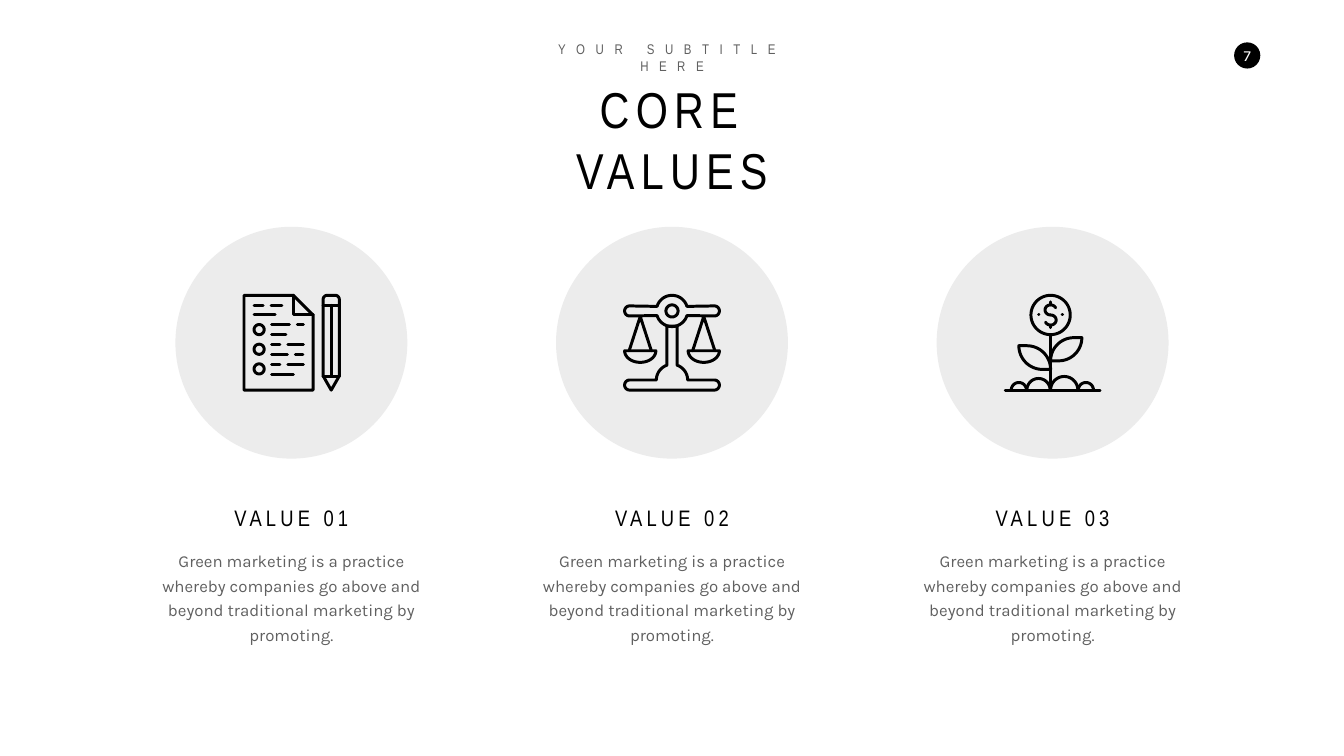
from math import cos, radians, sin

from pptx import Presentation
from pptx.dml.color import RGBColor
from pptx.enum.shapes import MSO_SHAPE
from pptx.enum.text import MSO_ANCHOR, MSO_AUTO_SIZE, PP_ALIGN
from pptx.util import Pt

EMU_PER_PX = 9144  # 100 px to the inch
CENTER, PITCH = 1333, 755
ICON_SIZE, ICON_TOP = 194, 583
HEADING_FONT, BODY_FONT = "Arial Narrow", "Karla"
BLACK, GRAY, PALE, WHITE = "000000", "606060", "ECECEC", "FFFFFF"
DESCRIPTION = ("Green marketing is a practice whereby companies go above and "
               "beyond traditional marketing by promoting.")


def px(length):
    return round(length * EMU_PER_PX)


def color(hex_string):
    return RGBColor.from_string(hex_string)


def place(shape, left, top, width, height):
    shape.left, shape.top = px(left), px(top)
    shape.width, shape.height = px(width), px(height)


def write(shape, text, size, font_name, font_color, spacing=0, wrap=True,
          anchor=MSO_ANCHOR.TOP, line_spacing=None):
    """Fill a shape with one centred run; spacing is letter spacing in points."""
    frame = shape.text_frame
    frame.word_wrap = wrap
    frame.auto_size = MSO_AUTO_SIZE.NONE
    frame.vertical_anchor = anchor
    paragraph = frame.paragraphs[0]
    paragraph.alignment = PP_ALIGN.CENTER
    if line_spacing:
        paragraph.line_spacing = Pt(line_spacing)
    run = paragraph.add_run()
    run.text = text
    run.font.size = Pt(size)
    run.font.name = font_name
    run.font.color.rgb = color(font_color)
    if spacing:
        run._r.get_or_add_rPr().set("spc", str(spacing * 100))


def add_text(slide, box, text, *style, **options):
    shape = slide.shapes.add_textbox(*map(px, box))
    write(shape, text, *style, **options)


def add_disc(slide, left, top, diameter, fill):
    shape = slide.shapes.add_shape(
        MSO_SHAPE.OVAL, px(left), px(top), px(diameter), px(diameter))
    shape.shadow.inherit = False
    shape.fill.solid()
    shape.fill.fore_color.rgb = color(fill)
    shape.line.fill.background()
    return shape


def arc(x, y, radius, start, end, radius_y=None):
    """Points along an arc; degrees run clockwise from the right."""
    steps = max(4, round(abs(end - start) / 6))
    angles = [radians(start + (end - start) * i / steps) for i in range(steps + 1)]
    return [(x + radius * cos(a), y + (radius_y or radius) * sin(a)) for a in angles]


def circle(x, y, radius):
    return arc(x, y, radius, 0, 360)


def closed(points):
    return points + points[:1]


def dash(y, start, end):
    return [(start, y), (end, y)]


def checklist_strokes():
    page = closed([(3, 3), (101, 3), (140, 42), (140, 191), (3, 191)])
    fold = [(101, 3), (101, 42), (140, 42)]
    pencil = closed(arc(168, 11, 8, 180, 270) + arc(184, 11, 8, 270, 360)
                    + [(192, 163), (176, 191), (160, 163)])
    dashes = [(23, 23, 41), (23, 57, 78), (42, 23, 65), (61, 58, 93),
              (61, 109, 121), (81, 58, 86), (101, 58, 74), (101, 90, 121),
              (120, 58, 89), (120, 105, 120), (140, 58, 74), (140, 90, 121),
              (160, 58, 101), (23, 160, 192), (164, 160, 192)]
    return [page, fold, pencil, [(176, 23), (176, 164)],
            *[dash(*values) for values in dashes],
            *[circle(33, y, 10) for y in (71, 110, 149)]]


def scales_strokes():
    beam = closed(arc(97, 34, 31, 197, 343) + arc(181, 34, 10, -90, 90)
                  + arc(97, 34, 31, 17, 163) + arc(13, 34, 10, 90, 270))
    stand = closed(arc(97, 171, 31, 180, 251) + [(87, 64), (107, 64)]
                   + arc(97, 171, 31, 289, 360) + arc(181, 181, 10, -90, 90)
                   + arc(13, 181, 10, 90, 270))
    strokes = [beam, stand, circle(97, 34, 12)]
    for x in (34, 160):
        strokes += [[(x - 22, 113), (x, 45), (x + 22, 113)],
                    closed(arc(x, 113, 31, 0, 180, radius_y=23))]
    return strokes


def plant_strokes():
    dollar = [arc(93, 32, 11, 335, 90, radius_y=10),
              arc(93, 52, 11, 270, 515, radius_y=10),
              [(93, 16), (93, 22)], [(93, 62), (93, 67)]]
    right_leaf = closed(arc(139, 133, 46, 180, 270) + arc(109, 87, 46, 0, 90))
    left_leaf = closed(arc(46, 150, 47, 270, 360) + arc(77, 103, 47, 90, 180))
    mounds = [arc(x, 191, radius, 180, 360)
              for x, radius in ((30, 15), (69, 23), (120, 27), (163, 15))]
    return [circle(93, 42, 39), *dollar, dash(42, 69, 70), dash(42, 116, 117),
            [(93, 81), (93, 191)], right_leaf, left_leaf, *mounds, dash(191, 3, 191)]


def add_icon(slide, left, top, strokes):
    """Draw all strokes of an icon as one unfilled outline."""
    paths = [[(px(left + x), px(top + y)) for x, y in stroke] for stroke in strokes]
    builder = slide.shapes.build_freeform(*paths[0][0])
    for index, points in enumerate(paths):
        if index:
            builder.move_to(*points[0])
        builder.add_line_segments(points[1:], close=points[0] == points[-1])
    shape = builder.convert_to_shape()
    shape.shadow.inherit = False
    shape.fill.background()
    shape.line.color.rgb = color(BLACK)
    shape.line.width = Pt(4.25)
    outline = shape.line._get_or_add_ln()
    outline.set("cap", "rnd")


def add_value(slide, center, number, strokes):
    add_disc(slide, center - 230, 450, 460, PALE)
    add_icon(slide, center - ICON_SIZE // 2, ICON_TOP, strokes)
    add_text(slide, (center - 129, 995, 258, 64), f"VALUE {number:02}",
             32, HEADING_FONT, BLACK, spacing=6, wrap=False, anchor=MSO_ANCHOR.MIDDLE)
    add_text(slide, (center - 287, 1080, 574, 154), DESCRIPTION,
             24, BODY_FONT, GRAY, line_spacing=35)


def add_page_number(slide, number):
    badge = add_disc(slide, 2448, 84, 52, BLACK)
    frame = badge.text_frame
    frame.margin_left = frame.margin_right = frame.margin_top = frame.margin_bottom = 0
    write(badge, number, 22, BODY_FONT, WHITE, wrap=False, anchor=MSO_ANCHOR.MIDDLE)


def main():
    presentation = Presentation()
    presentation.slide_width, presentation.slide_height = px(2666), px(1500)
    slide = presentation.slides.add_slide(presentation.slide_layouts[5])
    title = slide.shapes.title
    place(title, 975, 150, 716, 131)
    write(title, "CORE VALUES", 72, HEADING_FONT, BLACK, spacing=9)
    add_text(slide, (1027, 76, 612, 44), "YOUR SUBTITLE HERE",
             20, HEADING_FONT, GRAY, spacing=15)
    add_page_number(slide, "7")
    icons = (checklist_strokes(), scales_strokes(), plant_strokes())
    for index, strokes in enumerate(icons):
        add_value(slide, CENTER + PITCH * (index - 1), index + 1, strokes)
    presentation.save("out.pptx")


if __name__ == "__main__":
    main()
